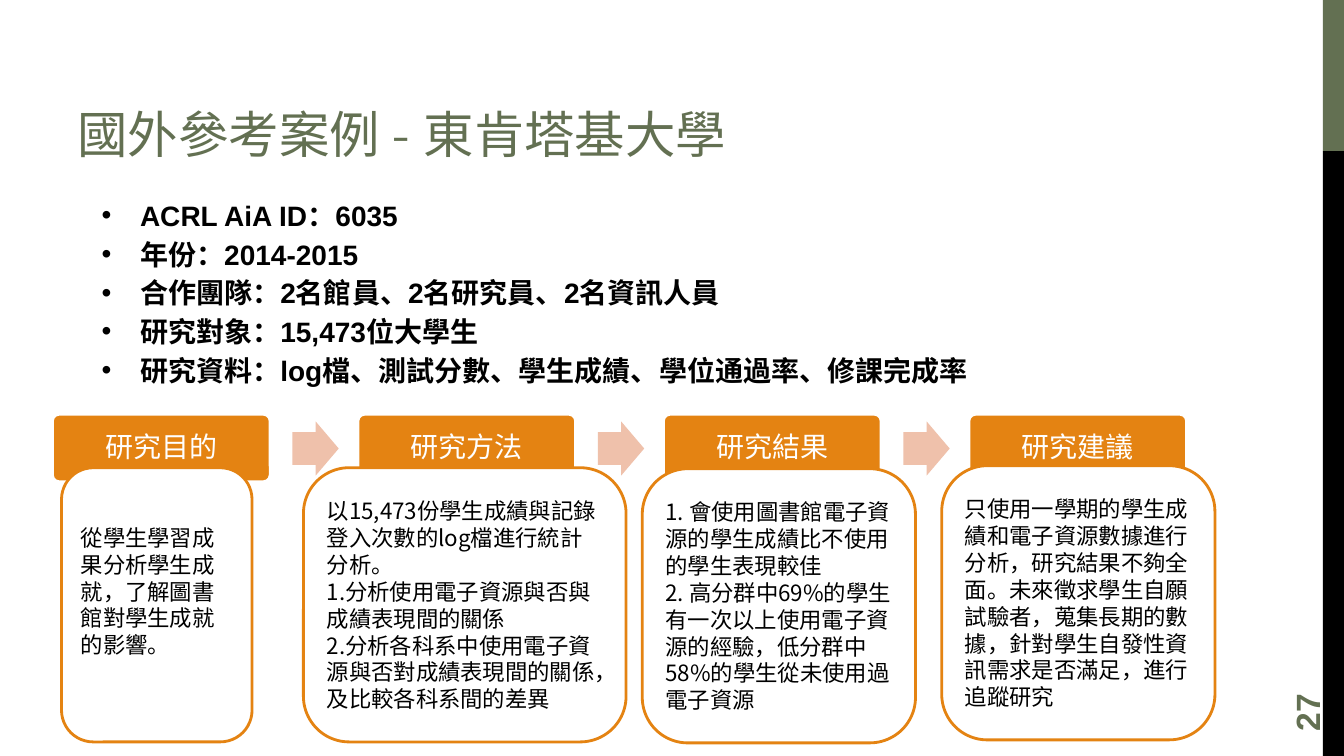
from dataclasses import dataclass

import pptx
import pptx.dml.color
import pptx.enum.shapes
import pptx.enum.text
import pptx.oxml.ns
import pptx.util
from lxml import etree

Inches = pptx.util.Inches
Pt = pptx.util.Pt
Shapes = pptx.enum.shapes.MSO_SHAPE
Anchor = pptx.enum.text.MSO_ANCHOR
Align = pptx.enum.text.PP_ALIGN
qn = pptx.oxml.ns.qn

GREEN, BLACK, WHITE = "637052", "000000", "FFFFFF"
ORANGE, PEACH = "E48312", "EFC1AB"
CJK_FONT = "Noto Sans CJK SC"


@dataclass
class Box:
    left: float
    top: float
    width: float
    height: float

    def lengths(self) -> list:
        return [Inches(side) for side in (self.left, self.top, self.width, self.height)]


@dataclass
class Style:
    size: float
    font: str
    color: str
    bold: bool = False


@dataclass
class Stage:
    heading: str
    card: Box
    paragraphs: list[str]
    bottom_inset: float = 0.05


FACTS = [
    "ACRL AiA ID：6035",
    "年份：2014-2015",
    "合作團隊：2名館員、2名研究員、2名資訊人員",
    "研究對象：15,473位大學生",
    "研究資料：log檔、測試分數、學生成績、學位通過率、修課完成率",
]
STAGES = [
    Stage("研究目的", Box(0.61, 4.64, 1.89, 2.72),
          ["從學生學習成果分析學生成就，了解圖書館對學生成就的影響。"], 0.32),
    Stage("研究方法", Box(3.01, 4.64, 3.2, 2.72),
          ["以15,473份學生成績與記錄登入次數的log檔進行統計分析。",
           "1.分析使用電子資源與否與成績表現間的關係",
           "2.分析各科系中使用電子資源與否對成績表現間的關係，及比較各科系間的差異"]),
    Stage("研究結果", Box(6.37, 4.65, 2.71, 2.72),
          ["1. 會使用圖書館電子資源的學生成績比不使用的學生表現較佳",
           "2. 高分群中69%的學生有一次以上使用電子資源的經驗，低分群中58%的學生從未使用過電子資源"]),
    Stage("研究建議", Box(9.34, 4.62, 2.71, 2.72),
          ["只使用一學期的學生成績和電子資源數據進行分析，研究結果不夠全面。"
           "未來徵求學生自願試驗者，蒐集長期的數據，針對學生自發性資訊需求是否滿足，進行追蹤研究"]),
]
STAGE_LEFT, STAGE_PITCH = 0.52, 3.03


def rgb(color: str):
    return pptx.dml.color.RGBColor.from_string(color)


def add_shape(page, kind, box: Box, fill: str, line: str = "", adjustments=()):
    shape = page.shapes.add_shape(kind, *box.lengths())
    shape.shadow.inherit = False
    shape.fill.solid()
    shape.fill.fore_color.rgb = rgb(fill)
    if line:
        shape.line.color.rgb = rgb(line)
        shape.line.width = Pt(2)
    else:
        shape.line.fill.background()
    for index, value in enumerate(adjustments):
        shape.adjustments[index] = value
    return shape


def add_bullet(para) -> None:
    properties = para._p.get_or_add_pPr()
    properties.set("marL", str(Inches(0.62)))
    properties.set("indent", str(Inches(-0.38)))
    etree.SubElement(properties, qn("a:buFont")).set("typeface", "Arial")
    etree.SubElement(properties, qn("a:buChar")).set("char", "•")


def write(shape, paragraphs: list[str], style: Style, anchor=Anchor.MIDDLE,
          align=Align.LEFT, bullets: bool = False, gap: float = 0) -> None:
    frame = shape.text_frame
    frame.word_wrap = True
    frame.vertical_anchor = anchor
    for index, text in enumerate(paragraphs):
        para = frame.add_paragraph() if index else frame.paragraphs[0]
        if bullets:
            add_bullet(para)
        para.alignment = align
        if index and gap:
            para.space_before = Pt(gap)
        span = para.add_run()
        span.text = text
        span.font.size = Pt(style.size)
        span.font.bold = style.bold
        span.font.color.rgb = rgb(style.color)
        span.font.name = style.font
        if style.font == CJK_FONT:
            east_asian = etree.SubElement(span.font._element, qn("a:ea"))
            east_asian.set("typeface", CJK_FONT)


def add_text(page, box: Box, paragraphs: list[str], style: Style, **options):
    shape = page.shapes.add_textbox(*box.lengths())
    write(shape, paragraphs, style, **options)
    return shape


def main() -> None:
    deck = pptx.Presentation()
    deck.slide_width, deck.slide_height = Inches(13.33), Inches(7.5)
    page = deck.slides.add_slide(deck.slide_layouts[6])

    # Side band
    add_shape(page, Shapes.RECTANGLE, Box(13.12, 0, 0.21, 1.5), GREEN)
    add_shape(page, Shapes.RECTANGLE, Box(13.12, 1.5, 0.21, 6), BLACK)

    # Title, facts and page number
    add_text(page, Box(0.67, 0.17, 10.28, 1.5), ["國外參考案例 - 東肯塔基大學"],
             Style(36, "Montserrat", GREEN), anchor=Anchor.BOTTOM)
    add_text(page, Box(0.67, 1.92, 11.11, 2.1), FACTS, Style(20, "Arial", BLACK, True),
             anchor=Anchor.TOP, bullets=True, gap=3.6)
    number = add_text(page, Box(12.24, 6.37, 1.44, 0.53), ["27"],
                      Style(24, "Arial", GREEN, True))
    number.rotation = 270

    # Stage headings with arrows between them
    for index, stage in enumerate(STAGES):
        left = STAGE_LEFT + index * STAGE_PITCH
        if index:
            add_shape(page, Shapes.RIGHT_ARROW, Box(left - 0.65, 4.18, 0.46, 0.54),
                      PEACH, adjustments=(0.6, 0.5))
        heading = add_shape(page, Shapes.ROUNDED_RECTANGLE, Box(left, 4.11, 2.16, 0.67),
                            ORANGE, WHITE, (0.1,))
        write(heading, [stage.heading], Style(20, CJK_FONT, WHITE), align=Align.CENTER)
        heading.text_frame.paragraphs[0].line_spacing = 0.9

    # Stage cards, overlapping the headings
    for stage in STAGES:
        card = add_shape(page, Shapes.ROUNDED_RECTANGLE, stage.card, WHITE, ORANGE)
        write(card, stage.paragraphs, Style(16, CJK_FONT, BLACK))
        card.text_frame.margin_bottom = Inches(stage.bottom_inset)

    deck.save("out.pptx")


if __name__ == "__main__":
    main()
